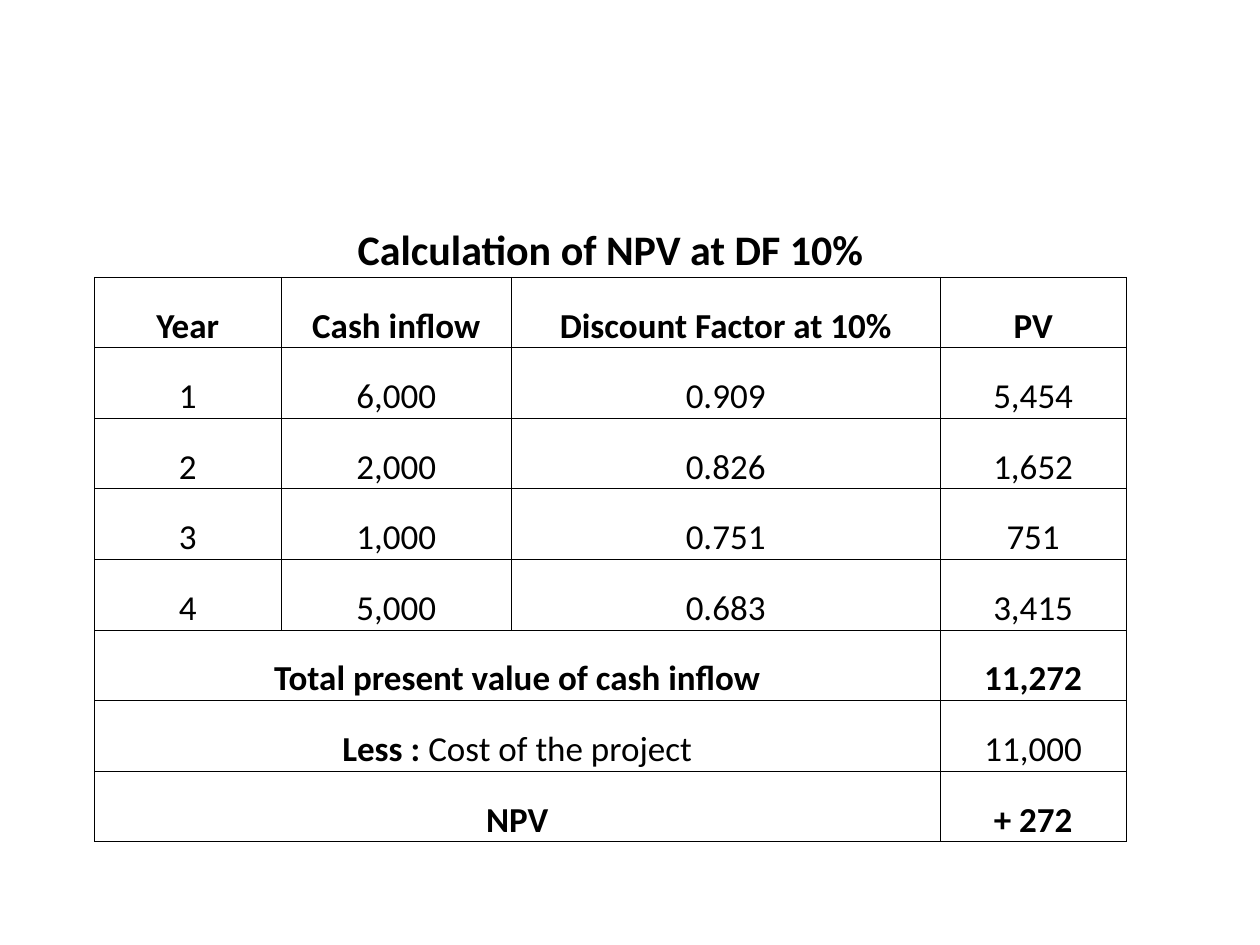
from lxml import etree
from pptx import Presentation
from pptx.dml.color import RGBColor
from pptx.enum import text as t
from pptx.oxml import ns
from pptx.util import Inches, Pt

TITLE = "Calculation of NPV at DF 10%"
HEADS = ["Year", "Cash inflow", "Discount Factor at 10%", "PV"]
YEARS = [
    ["1", "6,000", "0.909", "5,454"],
    ["2", "2,000", "0.826", "1,652"],
    ["3", "1,000", "0.751", "751"],
    ["4", "5,000", "0.683", "3,415"],
]
# Each total: label runs as (text, bold), then the value run
TOTALS = [
    ([("Total present value of cash inflow", True)], ("11,272", True)),
    ([("Less : ", True), ("Cost of the project", False)], ("11,000", False)),
    ([("NPV", True)], ("+ 272", True)),
]
WIDTHS = [1.48, 1.83, 3.4, 1.48]
HEIGHTS = [0.58] + [0.56] * 8


def color(code):
    return RGBColor.from_string(code)


class Deck:
    font = "Calibri"
    ink = "000000"
    line = 0.5

    def __init__(self):
        self.prs = Presentation()
        self.prs.slide_width = Inches(10)
        self.prs.slide_height = Inches(7.5)
        self.slide = self.prs.slides.add_slide(self.prs.slide_layouts[6])

    def table(self, left, top, widths, heights):
        frame = self.slide.shapes.add_table(
            len(heights), len(widths), Inches(left), Inches(top),
            Inches(sum(widths)), Inches(sum(heights)))
        grid = frame.table
        grid.first_row = grid.horz_banding = False
        for col, width in zip(grid.columns, widths):
            col.width = Inches(width)
        for row, height in zip(grid.rows, heights):
            row.height = Inches(height)
        return grid

    def edges(self, cell, sides):
        """Draw the named sides (of L, R, T, B) and clear the others."""
        props = cell._tc.get_or_add_tcPr()
        for side in "LRTB":
            edge = etree.SubElement(props, ns.qn("a:ln" + side),
                                    w=str(Pt(self.line)))
            if side in sides:
                fill = etree.SubElement(edge, ns.qn("a:solidFill"))
                etree.SubElement(fill, ns.qn("a:srgbClr"), val=self.ink)
            else:
                etree.SubElement(edge, ns.qn("a:noFill"))

    def style(self, cell, sides="LRTB"):
        self.edges(cell, sides)
        cell.fill.background()
        cell.vertical_anchor = t.MSO_ANCHOR.BOTTOM
        cell.margin_left = cell.margin_right = cell.margin_top = Inches(0.01)
        cell.margin_bottom = 0

    def label(self, cell, runs, size=20):
        para = cell.text_frame.paragraphs[0]
        para.alignment = t.PP_ALIGN.CENTER
        for words, bold in runs:
            run = para.add_run()
            run.text = words
            run.font.name = self.font
            run.font.size = Pt(size)
            run.font.bold = bold
            run.font.color.rgb = color(self.ink)


def main():
    deck = Deck()
    grid = deck.table(0.75, 1.62, WIDTHS, HEIGHTS)
    for r in range(len(HEIGHTS)):
        for c in range(len(WIDTHS)):
            deck.style(grid.cell(r, c), "LRTB" if r else "B")

    last = len(WIDTHS) - 1
    grid.cell(0, 0).merge(grid.cell(0, last))
    deck.label(grid.cell(0, 0), [(TITLE, True)], 24)

    for r, row in enumerate([HEADS] + YEARS, 1):
        for c, words in enumerate(row):
            deck.label(grid.cell(r, c), [(words, r == 1)])

    for r, (name, value) in enumerate(TOTALS, len(YEARS) + 2):
        grid.cell(r, 0).merge(grid.cell(r, last - 1))
        deck.label(grid.cell(r, 0), name)
        deck.label(grid.cell(r, last), [value])

    deck.prs.save("out.pptx")


if __name__ == "__main__":
    main()
